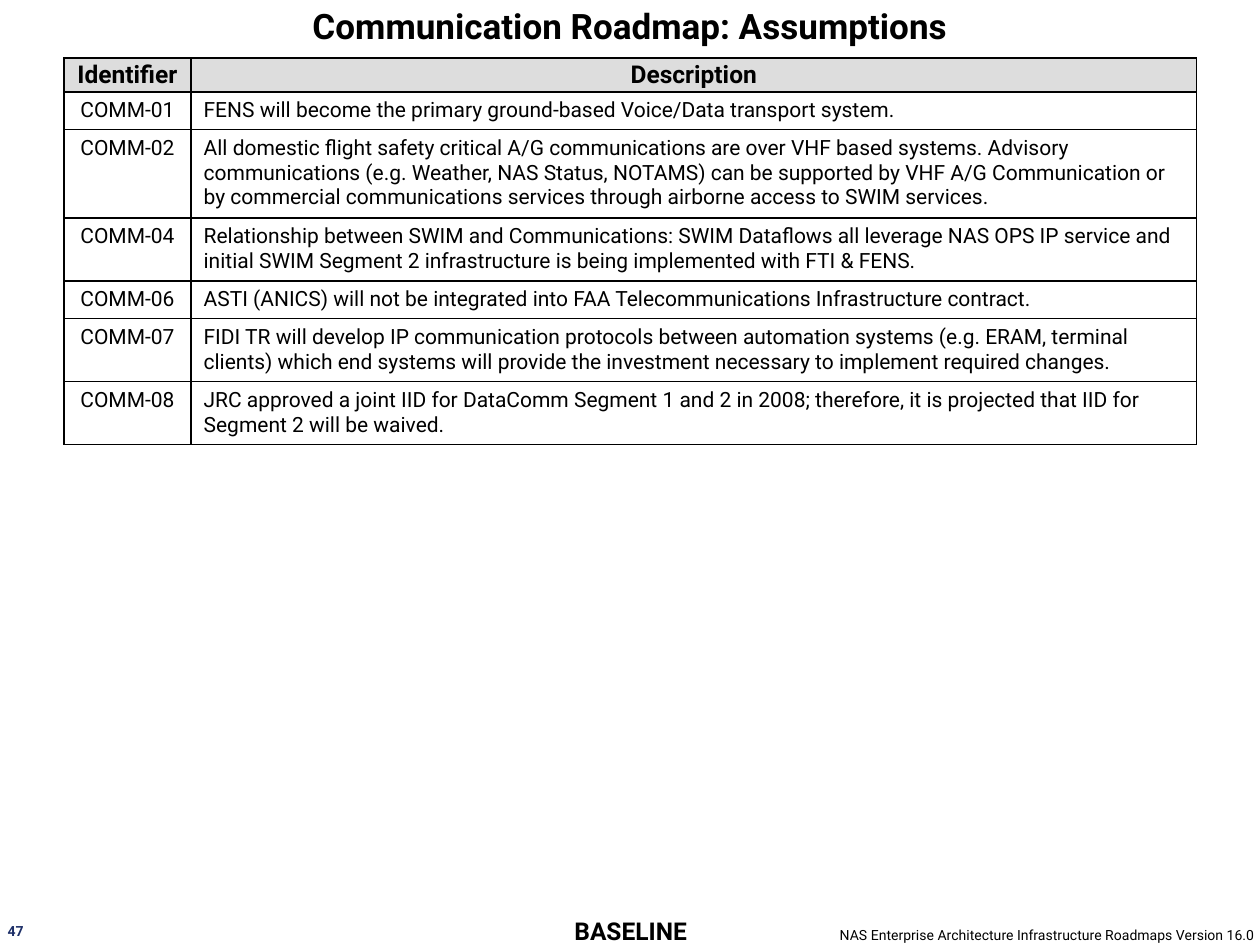
from lxml import etree
from pptx import Presentation
from pptx.dml.color import RGBColor
from pptx.enum.text import MSO_ANCHOR, PP_ALIGN
from pptx.oxml.ns import qn
from pptx.util import Pt

LEFT, MID, RIGHT = PP_ALIGN.LEFT, PP_ALIGN.CENTER, PP_ALIGN.RIGHT
TOP, CENTER = MSO_ANCHOR.TOP, MSO_ANCHOR.MIDDLE
HEX = {"ink": "000000", "navy": "1D2F68", "head": "DDDDDD", "body": "FFFFFF"}

ROWS = [
    (19.4, "Identifier", "Description"),
    (21.6, "COMM-01", "FENS will become the primary ground-based Voice/Data transport system."),
    (50.4, "COMM-02", "All domestic flight safety critical A/G communications are over VHF based "
     "systems. Advisory communications (e.g. Weather, NAS Status, NOTAMS) can be supported by "
     "VHF A/G Communication or by commercial communications services through airborne access "
     "to SWIM services."),
    (36, "COMM-04", "Relationship between SWIM and Communications: SWIM Dataflows all leverage "
     "NAS OPS IP service and initial SWIM Segment 2 infrastructure is being implemented with "
     "FTI & FENS."),
    (21.6, "COMM-06", "ASTI (ANICS) will not be integrated into FAA Telecommunications "
     "Infrastructure contract."),
    (36, "COMM-07", "FIDI TR will develop IP communication protocols between automation systems "
     "(e.g. ERAM, terminal clients) which end systems will provide the investment necessary to "
     "implement required changes."),
    (36, "COMM-08", "JRC approved a joint IID for DataComm Segment 1 and 2 in 2008; therefore, "
     "it is projected that IID for Segment 2 will be waived."),
]


def write(frame, text, size, bold, align, color="ink"):
    frame.text = text
    para = frame.paragraphs[0]
    para.alignment = align
    font = para.font
    font.name, font.size, font.bold = "Roboto", Pt(size), bold
    font.color.rgb = RGBColor.from_string(HEX[color])


def rule(cell):
    """Draw a 1 pt line on each side of a cell."""
    props = cell._tc.get_or_add_tcPr()
    for side in ("a:lnL", "a:lnR", "a:lnT", "a:lnB"):
        line = etree.SubElement(props, qn(side), w=str(Pt(1)))
        fill = etree.SubElement(line, qn("a:solidFill"))
        etree.SubElement(fill, qn("a:srgbClr"), val=HEX["ink"])


prs = Presentation()
prs.slide_width, prs.slide_height = Pt(720), Pt(540)
slide = prs.slides.add_slide(prs.slide_layouts[5])

# Title
title = slide.shapes.title
title.left, title.top, title.width, title.height = Pt(0), Pt(0), Pt(720), Pt(28.8)
write(title.text_frame, "Communication Roadmap: Assumptions", 20, True, MID)
title.text_frame.vertical_anchor = CENTER

# Assumptions table
widths = (72.7, 574.6)
height = sum(row[0] for row in ROWS)
table = slide.shapes.add_table(
    len(ROWS), 2, Pt(36.5), Pt(33.1), Pt(sum(widths)), Pt(height)).table
table.first_row = table.horz_banding = False
for col, width in zip(table.columns, widths):
    col.width = Pt(width)

for r, (tall, *texts) in enumerate(ROWS):
    table.rows[r].height = Pt(tall)
    head = r == 0
    for c, text in enumerate(texts):
        cell = table.cell(r, c)
        write(cell.text_frame, text, 14 if head else 12, head, MID if head or c == 0 else LEFT)
        cell.margin_left = cell.margin_right = Pt(0 if head else 7.2)
        cell.margin_top = cell.margin_bottom = Pt(0 if head else 3.6)
        cell.vertical_anchor = CENTER if head else TOP
        rule(cell)
        cell.fill.solid()
        cell.fill.fore_color.rgb = RGBColor.from_string(HEX["head" if head else "body"])

# Footer: left, top, width, height, text, size, bold, align, anchor, color, side inset
FOOT = [
    (453.6, 529.2, 265, 9.4, "NAS Enterprise Architecture Infrastructure Roadmaps Version 16.0",
     8, False, RIGHT, TOP, "ink", 1.44),
    (304.6, 523.4, 111.6, 17.3, "BASELINE", 14, True, MID, CENTER, "ink", 0),
    (4.3, 527, 10, 9.4, "47", 8, True, LEFT, TOP, "navy", 0),
]
for x, y, w, h, text, size, bold, align, anchor, color, inset in FOOT:
    frame = slide.shapes.add_textbox(Pt(x), Pt(y), Pt(w), Pt(h)).text_frame
    frame.word_wrap = text != "47"
    frame.margin_left = frame.margin_right = Pt(inset)
    frame.margin_top = frame.margin_bottom = Pt(0)
    frame.vertical_anchor = anchor
    write(frame, text, size, bold, align, color)

prs.save("out.pptx")
